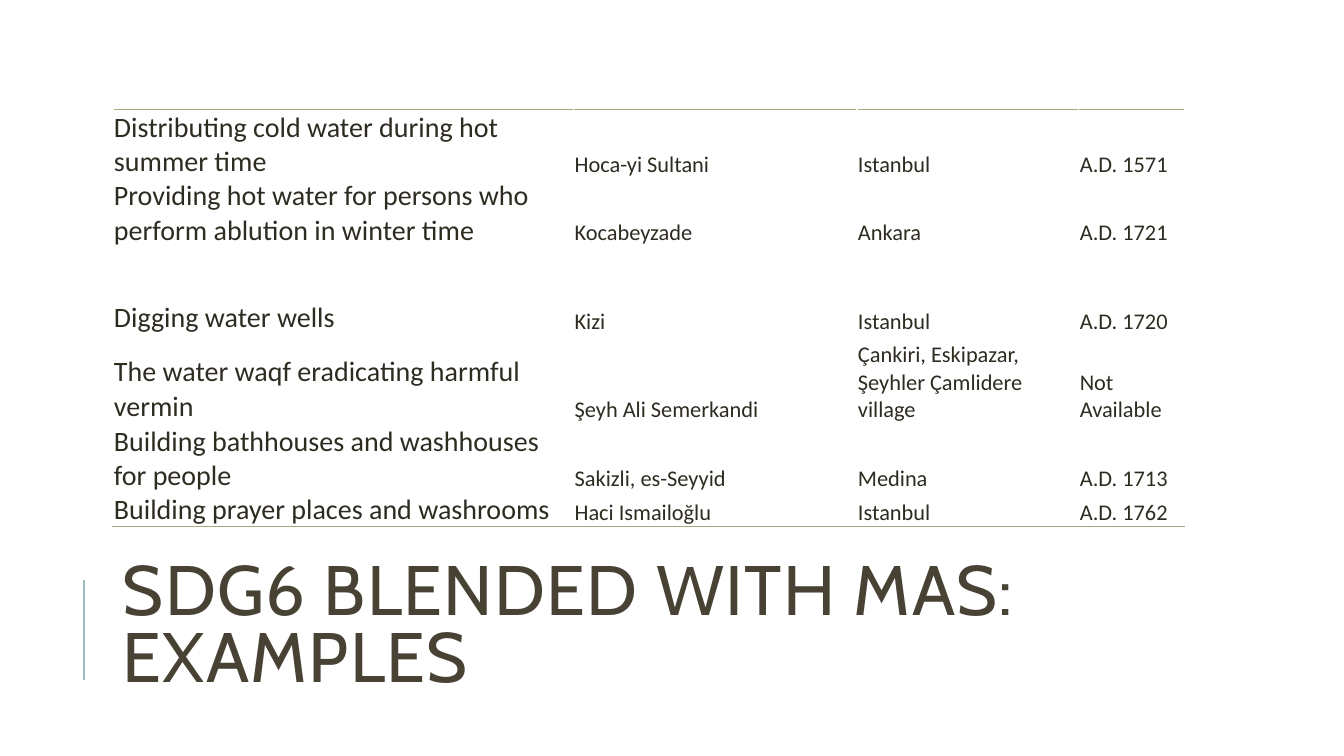
from dataclasses import dataclass

from lxml import etree
from pptx import Presentation
from pptx.dml.color import RGBColor
from pptx.enum.shapes import MSO_CONNECTOR
from pptx.enum.text import MSO_ANCHOR
from pptx.oxml.ns import qn
from pptx.util import Inches, Pt

STRAIGHT = MSO_CONNECTOR.STRAIGHT
MIDDLE = MSO_ANCHOR.MIDDLE
BOTTOM = MSO_ANCHOR.BOTTOM


@dataclass(frozen=True)
class Theme:
    title_font: str = "Cabin"
    body_font: str = "Calibri"
    title_color: str = "474233"
    text_color: str = "2E2B21"
    rule_color: str = "A9A57C"
    accent_color: str = "9CBEBD"
    title_size: int = 50
    purpose_size: int = 20
    detail_size: int = 16
    rule_width: int = 1
    accent_width: float = 1.5


COLUMN_WIDTHS = [4.57, 2.81, 2.2, 1.05]
ROW_HEIGHTS = [0.61, 0.61, 0.88, 0.88, 0.61, 0.34]
WAQFS = [
    ("Distributing cold water during hot summer time", "Hoca-yi Sultani", "Istanbul", "A.D. 1571"),
    ("Providing hot water for persons who perform ablution in winter time",
     "Kocabeyzade", "Ankara", "A.D. 1721"),
    ("Digging water wells", "Kizi", "Istanbul", "A.D. 1720"),
    ("The water waqf eradicating harmful vermin", "Şeyh Ali Semerkandi",
     "Çankiri, Eskipazar, Şeyhler Çamlidere village", "Not Available"),
    ("Building bathhouses and washhouses for people", "Sakizli, es-Seyyid", "Medina", "A.D. 1713"),
    ("Building prayer places and washrooms", "Haci Ismailoğlu", "Istanbul", "A.D. 1762"),
]


def apply(target, values):
    for name, value in values.items():
        setattr(target, name, value)


class SlideBuilder:
    def __init__(self, slide, theme):
        self.s = slide
        self.theme = theme

    def add_text(self, tf, text, font, size, color):
        """Put one formatted run in the first paragraph and return both."""
        p = tf.paragraphs[0]
        r = p.add_run()
        r.text = text
        apply(r.font, {"name": font, "size": Pt(size)})
        r.font.color.rgb = RGBColor.from_string(color)
        return p, r

    def title(self, text, left, top, width, height):
        t = self.theme
        tf = self.s.shapes.add_textbox(
            Inches(left), Inches(top), Inches(width), Inches(height)).text_frame
        apply(tf, {"word_wrap": True, "vertical_anchor": MIDDLE})
        p, r = self.add_text(tf, text, t.title_font, t.title_size, t.title_color)
        p.line_spacing = 0.8
        r._r.get_or_add_rPr().set("spc", "100")

    def accent_line(self, x, start, end):
        line = self.s.shapes.add_connector(
            STRAIGHT, Inches(x), Inches(start), Inches(x), Inches(end))
        line.line.color.rgb = RGBColor.from_string(self.theme.accent_color)
        line.line.width = Pt(self.theme.accent_width)
        etree.SubElement(line._element.spPr, qn("a:effectLst"))

    def border(self, cell, side):
        """Rule one side of a cell: lnT is the top, lnB the bottom."""
        ln = etree.Element(qn(f"a:{side}"), w=str(Pt(self.theme.rule_width)))
        fill = etree.SubElement(ln, qn("a:solidFill"))
        etree.SubElement(fill, qn("a:srgbClr"), val=self.theme.rule_color)
        cell._tc.get_or_add_tcPr().insert(0, ln)

    def cell(self, cell, text, size):
        cell.fill.background()
        apply(cell, {
            "vertical_anchor": BOTTOM,
            "margin_left": Inches(0.01),
            "margin_right": Inches(0.01),
            "margin_top": Inches(0.01),
            "margin_bottom": 0,
        })
        self.add_text(cell.text_frame, text, self.theme.body_font, size, self.theme.text_color)

    def table(self, rows, left, top, widths, heights):
        t = self.theme
        table = self.s.shapes.add_table(
            len(rows), len(widths), Inches(left), Inches(top),
            Inches(sum(widths)), Inches(sum(heights))).table
        apply(table, {"first_row": False, "horz_banding": False})
        for column, width in zip(table.columns, widths):
            column.width = Inches(width)
        for row, height in zip(table.rows, heights):
            row.height = Inches(height)
        for i, texts in enumerate(rows):
            for j, text in enumerate(texts):
                size = t.detail_size if j else t.purpose_size
                self.cell(table.cell(i, j), text, size)
        for j in range(len(widths)):
            self.border(table.cell(0, j), "lnT")
            self.border(table.cell(len(rows) - 1, j), "lnB")


def main():
    prs = Presentation()
    apply(prs, {"slide_width": Inches(13.33), "slide_height": Inches(7.5)})
    builder = SlideBuilder(prs.slides.add_slide(prs.slide_layouts[6]), Theme())
    builder.title("SDG6 BLENDED WITH MAS: EXAMPLES", 1.12, 5.42, 10.63, 1.64)
    builder.accent_line(0.83, 6.75, 5.75)
    builder.table(WAQFS, 1.12, 1.09, COLUMN_WIDTHS, ROW_HEIGHTS)
    prs.save("out.pptx")


if __name__ == "__main__":
    main()
